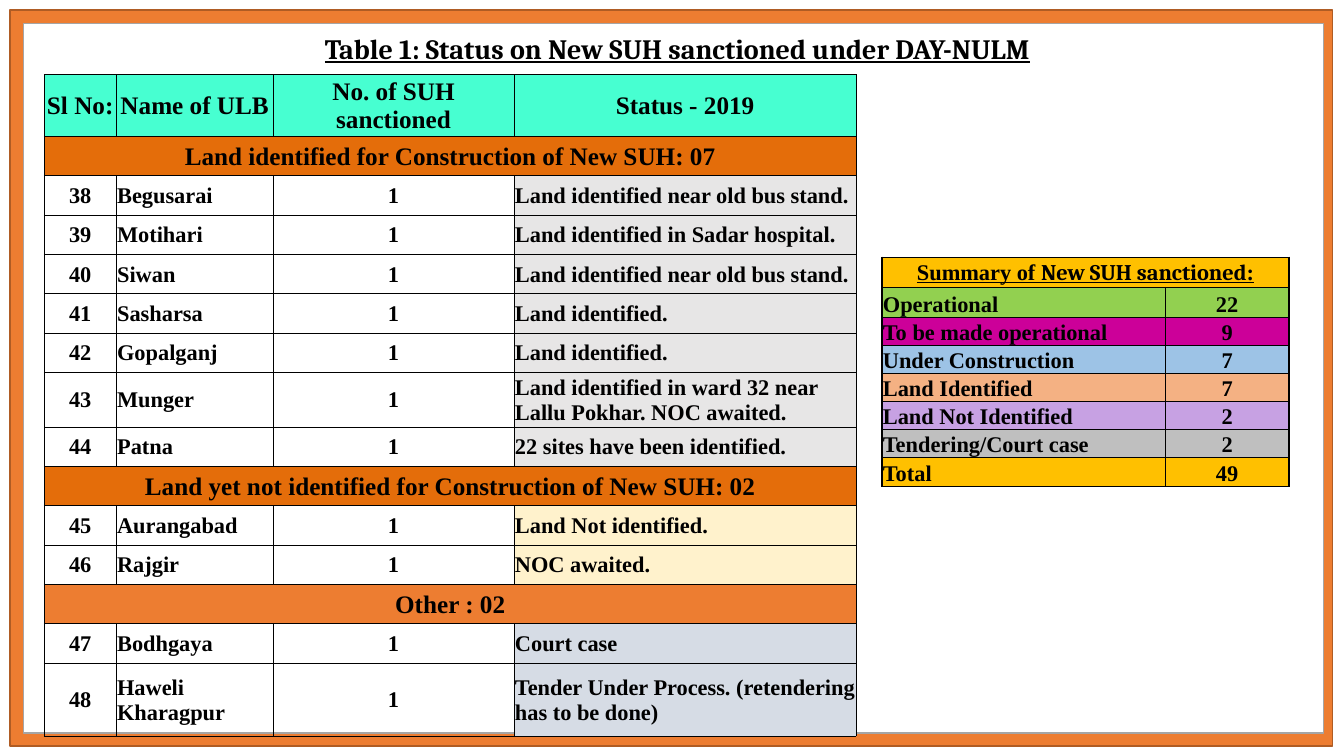
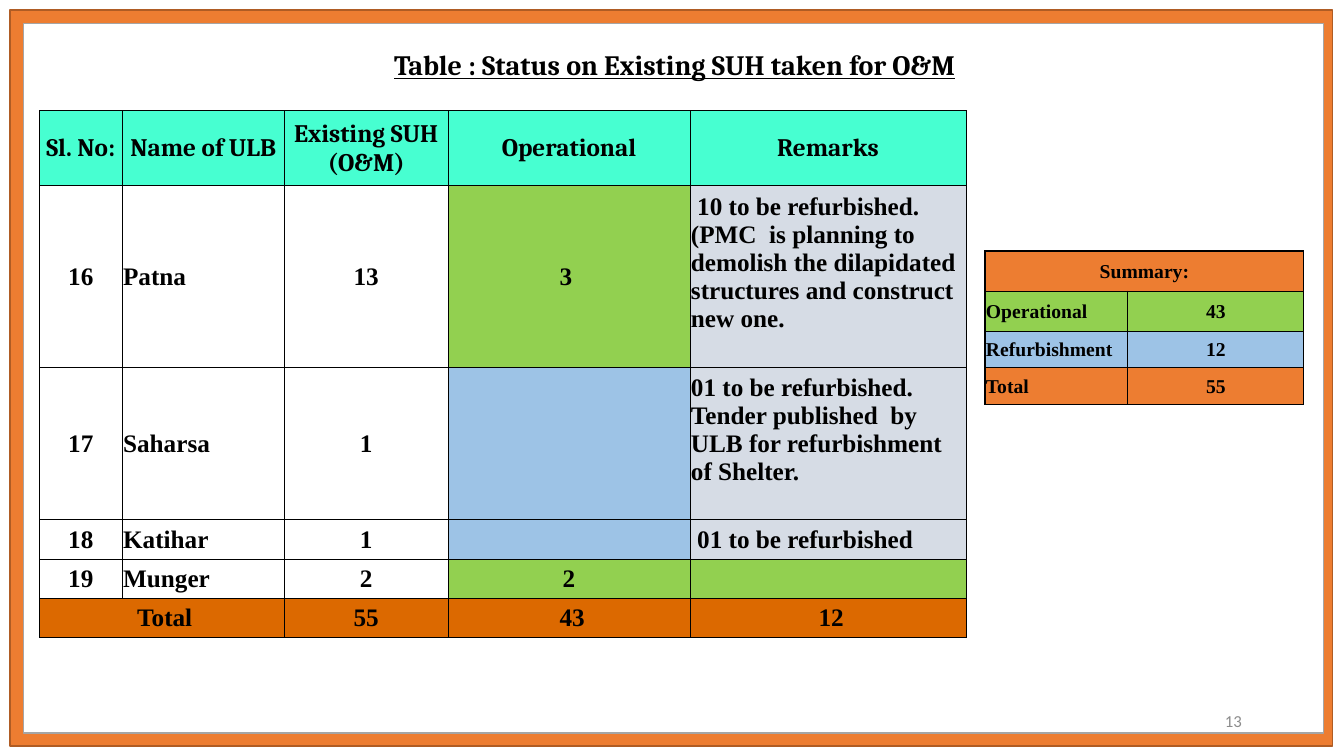
from dataclasses import dataclass
from lxml import etree
from pptx import Presentation
from pptx.dml.color import RGBColor
from pptx.enum.shapes import MSO_SHAPE
from pptx.enum.text import MSO_ANCHOR as ANCHOR, PP_ALIGN as ALIGN
from pptx.oxml.ns import qn
from pptx.util import Pt

# Shared look
SERIF, HEADING, SANS = "Times New Roman", "Cambria", "Calibri"
BLACK, WHITE = "000000", "FFFFFF"
ORANGE, DARK_ORANGE, BURNT = "ED7D31", "E46D0A", "DC6900"
MINT, GREEN, BLUE, AMBER = "47FFD1", "92D050", "9DC3E6", "FFC000"
SILVER, CREAM, MIST = "E7E6E6", "FFF2CC", "D6DCE5"
FRAMES = [  # left, top, width, height, fill, line
    (7.2, 7.2, 944.6, 525.6, ORANGE, "AF5C24"),
    (16.6, 16.6, 928.8, 506.9, WHITE, "A5A5A5"),
]


@dataclass
class Row:
    """With fewer cells than columns, the first cell spans the missing ones."""
    cells: list
    fills: list  # one per cell; None is unfilled
    height: float = 28.1
    size: int = 18
    font: str = SERIF
    centred: bool = False
    underline: bool = False
    anchor: ANCHOR = ANCHOR.MIDDLE
    bottom: float = 0  # space under the text of the last cell


def header(labels, height, font):
    return Row(labels, [MINT] * len(labels), height, font=font, centred=True)


def band(label, fill):
    return Row([label], [fill], centred=True)


def shelter(number, town, status, fill, height=28.1):
    return Row([number, town, "1", status], [None, None, None, fill], height, 16)


def tally(label, count, fill, height, size, anchor=ANCHOR.MIDDLE):
    return Row([label, count], [fill] * 2, height, size, anchor=anchor)


# Content
SANCTIONED = [
    header(["Sl No:", "Name of ULB", "No. of SUH sanctioned", "Status - 2019"], 44.3, SERIF),
    band("Land identified for Construction of New SUH: 07", DARK_ORANGE),
    shelter("38", "Begusarai", "Land identified near old bus stand.", SILVER),
    shelter("39", "Motihari", "Land identified in Sadar hospital.", SILVER),
    shelter("40", "Siwan", "Land identified near old bus stand.", SILVER),
    shelter("41", "Sasharsa", "Land identified.", SILVER),
    shelter("42", "Gopalganj", "Land identified.", SILVER),
    shelter("43", "Munger", "Land identified in ward 32 near Lallu Pokhar. NOC awaited.",
            SILVER, 39.2),
    shelter("44", "Patna", "22 sites have been identified.", SILVER),
    band("Land yet not identified for Construction of New SUH: 02", DARK_ORANGE),
    shelter("45", "Aurangabad", "Land Not identified.", CREAM),
    shelter("46", "Rajgir", "NOC awaited.", CREAM),
    band("Other : 02", ORANGE),
    shelter("47", "Bodhgaya", "Court case", MIST),
    shelter("48", "Haweli Kharagpur",
            "Tender Under Process. (retendering has to be done)", MIST, 52.2),
]
SANCTIONED_SUMMARY = [
    Row([[("Summary of ", SERIF), ("New SUH sanctioned", HEADING), (":", SERIF)]],
        [AMBER], 21.5, 16, centred=True, underline=True),
] + [
    tally(label, count, fill, height, 16, ANCHOR.BOTTOM)
    for label, count, fill, height in [
        ("Operational", "22", GREEN, 21.5),
        ("To be made operational", "9", "CC0099", 20),
        ("Under Construction", "7", BLUE, 20),
        ("Land Identified", "7", "F4B183", 20),
        ("Land Not Identified", "2", "C7A1E3", 20),
        ("Tendering/Court case", "2", "BFBFBF", 20),
        ("Total", "49", AMBER, 20.6),
    ]
]
EXISTING = [
    header(["Sl. No:", "Name of ULB", "Existing SUH (O&M)", "Operational", "Remarks"],
           53.5, HEADING),
    Row(["16", "Patna", "13", "3 ", " 10 to be refurbished. (PMC  is planning to demolish "
         "the dilapidated structures and construct new one."],
        [None, None, None, GREEN, MIST], 130, bottom=20),
    Row(["17", "Saharsa", "1", "", "01 to be refurbished. Tender published  by ULB for "
         "refurbishment of Shelter."], [None, None, None, BLUE, MIST], 108.6, bottom=20),
    Row(["18", "Katihar", "1", "", " 01 to be refurbished"], [None, None, None, BLUE, MIST]),
    Row(["19", "Munger", "2", "2", ""], [None, None, None, GREEN, GREEN]),
    Row([" Total", "55", " 43", " 12"], [BURNT] * 4, centred=True),
]
EXISTING_SUMMARY = [
    Row(["Summary:"], [ORANGE], 28.8, 14, centred=True),
    tally("Operational", "43", GREEN, 28.4, 14),
    tally("Refurbishment", "12", BLUE, 25.9, 14),
    tally("Total", "55", ORANGE, 26.8, 14),
]
# Tables: left, top, column widths, left-aligned columns, outer line width, rows
SLIDES = [
    {"title": "Table 1: Status on New SUH sanctioned under DAY-NULM",
     "title_box": (45.4, 18.7, 877, 31.7),
     "tables": [(31.6, 53.1, [51.4, 112.1, 172.1, 244.4], {1, 3}, 0.5, SANCTIONED),
                (630, 183.8, [202.3, 88.5], {0}, 1, SANCTIONED_SUMMARY)]},
    {"title": "Table : Status on Existing SUH taken for O&M",
     "title_box": (41, 30.5, 882, 55),
     "tables": [(28.1, 79, [59.2, 115.8, 117, 172.8, 197.2], {1, 4}, 0.5, EXISTING),
                (703.6, 179.3, [102, 125.8], {0}, 1, EXISTING_SUMMARY)],
     "number": "13"},
]


def rgb(code):
    return RGBColor.from_string(code)


def style_runs(paragraph, size, font, color, bold=False, underline=False):
    for run in paragraph.runs:
        run.font.size = Pt(size)
        run.font.name = run.font.name or font
        run.font.color.rgb = rgb(color)
        run.font.bold = bold
        run.font.underline = underline


def add_frame(slide):
    for *box, fill, line in FRAMES:
        panel = slide.shapes.add_shape(MSO_SHAPE.RECTANGLE, *map(Pt, box))
        panel.shadow.inherit = False
        panel.fill.solid()
        panel.fill.fore_color.rgb = rgb(fill)
        panel.line.color.rgb = rgb(line)
        panel.line.width = Pt(1)


def add_label(slide, text, box, align, anchor=ANCHOR.TOP, **look):
    frame = slide.shapes.add_textbox(*map(Pt, box)).text_frame
    frame.word_wrap = True
    frame.vertical_anchor = anchor
    frame.text = text
    frame.paragraphs[0].alignment = align
    style_runs(frame.paragraphs[0], **look)


def set_borders(cell, widths):
    """Draw the left, right, top and bottom lines of a cell."""
    props = cell._tc.get_or_add_tcPr()
    for side, width in zip("LRTB", widths):
        line = etree.SubElement(props, qn(f"a:ln{side}"), w=str(Pt(width)))
        fill = etree.SubElement(line, qn("a:solidFill"))
        etree.SubElement(fill, qn("a:srgbClr"), val=BLACK)


def fill_cell(cell, content, fill, row, align):
    cell.margin_left = cell.margin_right = cell.margin_top = Pt(0.7)
    cell.margin_bottom = Pt(0)
    cell.vertical_anchor = row.anchor
    if fill:
        cell.fill.solid()
        cell.fill.fore_color.rgb = rgb(fill)
    else:
        cell.fill.background()
    paragraph = cell.text_frame.paragraphs[0]
    if isinstance(content, str):
        paragraph.text = content
    else:
        for piece, font in content:
            run = paragraph.add_run()
            run.text, run.font.name = piece, font
    paragraph.alignment = align
    style_runs(paragraph, row.size, row.font, BLACK, True, row.underline)


def add_grid(slide, left, top, widths, left_columns, outer, rows):
    heights = [row.height for row in rows]
    table = slide.shapes.add_table(len(rows), len(widths), Pt(left), Pt(top),
                                   Pt(sum(widths)), Pt(sum(heights))).table
    table.first_row = table.horz_banding = False
    for column, width in zip(table.columns, widths):
        column.width = Pt(width)
    for r, row in enumerate(rows):
        table.rows[r].height = Pt(row.height)
        missing = len(widths) - len(row.cells)
        if missing:
            table.cell(r, 0).merge(table.cell(r, missing))
        for i, (content, fill) in enumerate(zip(row.cells, row.fills)):
            first, last = (i + missing if i else 0), i + missing
            cell = table.cell(r, first)
            # The table edge and the line under the heading take the outer width
            edges = (first == 0, last == len(widths) - 1, r < 2, r in (0, len(rows) - 1))
            set_borders(cell, [outer if edge else 0.5 for edge in edges])
            to_left = first in left_columns and not row.centred
            fill_cell(cell, content, fill, row, ALIGN.LEFT if to_left else ALIGN.CENTER)
        if row.bottom:
            cell.margin_bottom = Pt(row.bottom)


def main():
    deck = Presentation()
    deck.slide_width, deck.slide_height = Pt(960), Pt(540)
    for page in SLIDES:
        slide = deck.slides.add_slide(deck.slide_layouts[6])
        add_frame(slide)
        add_label(slide, page["title"], page["title_box"], ALIGN.CENTER,
                  size=20, font=HEADING, color=BLACK, bold=True, underline=True)
        for grid in page["tables"]:
            add_grid(slide, *grid)
        if "number" in page:
            add_label(slide, page["number"], (678.2, 500.4, 216, 28.8), ALIGN.RIGHT,
                      ANCHOR.MIDDLE, size=12, font=SANS, color="8C8C8C")
    deck.save("out.pptx")


if __name__ == "__main__":
    main()
